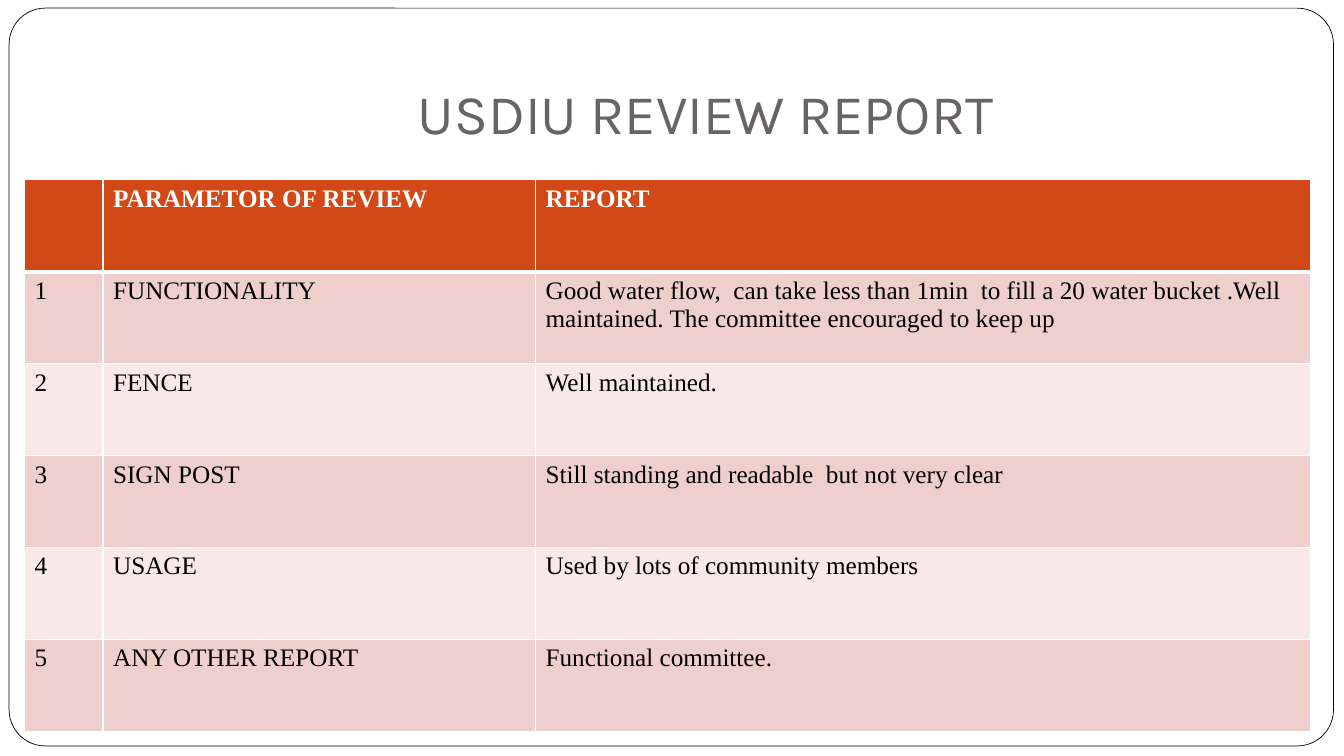
from dataclasses import dataclass

from pptx import Presentation
from pptx import util as u
from pptx.dml.color import RGBColor
from pptx.enum import shapes, text
from pptx.oxml import parse_xml
from pptx.oxml.ns import nsdecls


@dataclass(frozen=True)
class Theme:
    white: str = "FFFFFF"
    black: str = "000000"
    title: str = "696464"
    header: str = "D34817"
    bands: tuple = ("EFCFCC", "F7E9E8")
    title_font: str = "Karla"
    table_font: str = "Times New Roman"
    title_size: float = 40
    table_size: float = 18
    frame_line: float = 0.5
    grid_line: float = 1
    header_line: float = 3


THEME = Theme()
SLIDE_SIZE = (960, 540)
FRAME_BOX = (6.5, 5.8, 946, 527)
TITLE_BOX = (96, 21.6, 816, 90)
TABLE_BOX = (17.6, 128.4, 918.7, 394)
COLUMN_WIDTHS = (56, 309, 553.7)
ROWS = (
    ("", "PARAMETOR OF REVIEW", "REPORT"),
    ("1", "FUNCTIONALITY",
     "Good water flow,  can take less than 1min  to fill a 20 water bucket .Well "
     "maintained. The committee encouraged to keep up"),
    ("2", "FENCE", "Well maintained."),
    ("3", "SIGN POST", "Still standing and readable  but not very clear"),
    ("4", "USAGE", "Used by lots of community members"),
    ("5", "ANY OTHER REPORT", "Functional committee."),
)


def apply_format(target, values):
    for name, value in values.items():
        setattr(target, name, value)


def place(box):
    return [u.Pt(length) for length in box]


def set_fill(fill, color):
    fill.solid()
    fill.fore_color.rgb = RGBColor.from_string(color)


def format_font(font, name, size, color, bold=False):
    apply_format(font, {"name": name, "size": u.Pt(size), "bold": bold})
    font.color.rgb = RGBColor.from_string(color)


def set_border(cell, edge, width):
    border = parse_xml(
        f'<a:{edge} {nsdecls("a")} w="{u.Pt(width)}"><a:solidFill>'
        f'<a:srgbClr val="{THEME.white}"/></a:solidFill></a:{edge}>'
    )
    cell._tc.get_or_add_tcPr().append(border)


def add_frame(slide, box):
    frame = slide.shapes.add_shape(shapes.MSO_SHAPE.ROUNDED_RECTANGLE, *place(box))
    frame.adjustments[0] = 0.049
    frame.shadow.inherit = False
    set_fill(frame.fill, THEME.white)
    frame.line.color.rgb = RGBColor.from_string(THEME.black)
    frame.line.width = u.Pt(THEME.frame_line)
    slide.shapes.title._element.addprevious(frame._element)


def add_title(slide, box, wording):
    title = slide.shapes.title
    apply_format(title, dict(zip(("left", "top", "width", "height"), place(box))))
    frame = title.text_frame
    apply_format(frame, {
        "text": wording,
        "word_wrap": True,
        "auto_size": text.MSO_AUTO_SIZE.NONE,
        "vertical_anchor": text.MSO_ANCHOR.BOTTOM,
        "margin_left": u.Pt(7.2),
        "margin_top": u.Pt(3.6),
        "margin_right": u.Pt(7.2),
        "margin_bottom": u.Pt(7.2),
    })
    paragraph = frame.paragraphs[0]
    paragraph.alignment = text.PP_ALIGN.CENTER
    format_font(paragraph.runs[0].font, THEME.title_font, THEME.title_size, THEME.title)


def format_cell(cell, wording, row_index):
    is_header = row_index == 0
    cell.text = wording
    format_font(cell.text_frame.paragraphs[0].font, THEME.table_font, THEME.table_size,
                THEME.white if is_header else THEME.black, is_header)
    for run in cell.text_frame.paragraphs[0].runs:
        format_font(run.font, THEME.table_font, THEME.table_size,
                    THEME.white if is_header else THEME.black, is_header)
    top = THEME.header_line if row_index == 1 else THEME.grid_line
    bottom = THEME.header_line if is_header else THEME.grid_line
    for edge, width in (("lnL", THEME.grid_line), ("lnR", THEME.grid_line),
                        ("lnT", top), ("lnB", bottom)):
        set_border(cell, edge, width)
    set_fill(cell.fill, THEME.header if is_header else THEME.bands[(row_index - 1) % 2])


def add_review_table(slide, box, rows):
    table = slide.shapes.add_table(len(rows), len(COLUMN_WIDTHS), *place(box)).table
    for column, width in zip(table.columns, COLUMN_WIDTHS):
        column.width = u.Pt(width)
    for row_index, (row, wordings) in enumerate(zip(table.rows, rows)):
        row.height = u.Pt(box[3] / len(rows))
        for cell, wording in zip(row.cells, wordings):
            format_cell(cell, wording, row_index)


def build_review_slide(presentation):
    slide = presentation.slides.add_slide(presentation.slide_layouts[5])
    add_frame(slide, FRAME_BOX)
    add_title(slide, TITLE_BOX, "USDIU REVIEW REPORT")
    add_review_table(slide, TABLE_BOX, ROWS)


def main():
    presentation = Presentation()
    width, height = place(SLIDE_SIZE)
    apply_format(presentation, {"slide_width": width, "slide_height": height})
    build_review_slide(presentation)
    presentation.save("out.pptx")


if __name__ == "__main__":
    main()
